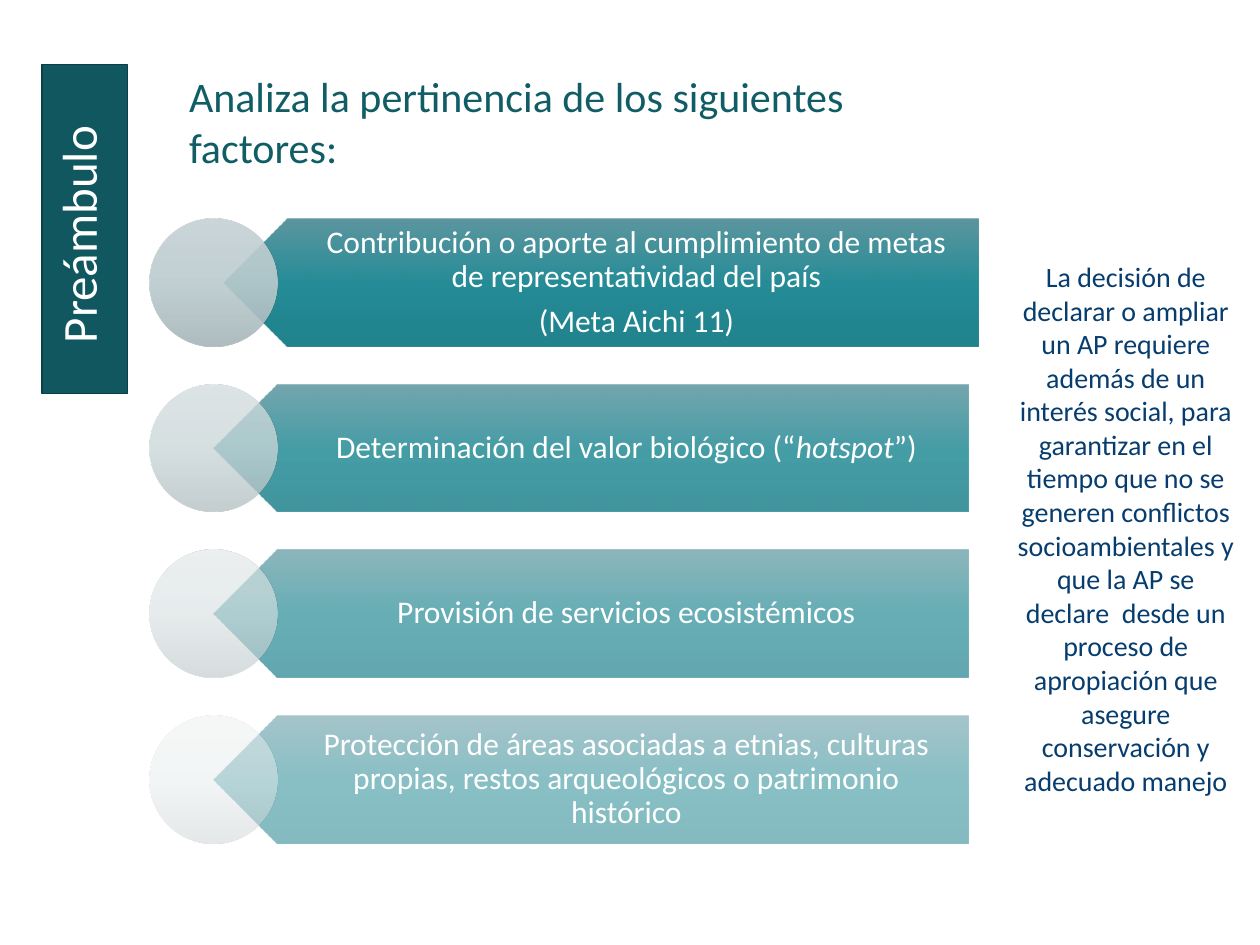
from lxml import etree
from pptx import Presentation
from pptx.dml.color import RGBColor
from pptx.enum.shapes import MSO_SHAPE
from pptx.enum.text import MSO_ANCHOR, MSO_AUTO_SIZE, PP_ALIGN
from pptx.oxml import parse_xml
from pptx.oxml.ns import nsdecls, qn
from pptx.util import Pt

RECTANGLE, PENTAGON, OVAL = MSO_SHAPE.RECTANGLE, MSO_SHAPE.PENTAGON, MSO_SHAPE.OVAL
TOP, MIDDLE = MSO_ANCHOR.TOP, MSO_ANCHOR.MIDDLE
LEFT, CENTER = PP_ALIGN.LEFT, PP_ALIGN.CENTER
NO_AUTOFIT = MSO_AUTO_SIZE.NONE
TITLE_ONLY = 5
FONT = "Calibri"

WHITE = RGBColor(0xFF, 0xFF, 0xFF)
DARK_TEAL = RGBColor(0x10, 0x57, 0x5F)
TAB_LINE = RGBColor(0x0C, 0x40, 0x46)
TITLE_TEAL = RGBColor(0x10, 0x5D, 0x65)
NAVY = RGBColor(0x07, 0x3D, 0x6E)
BAND_COLORS = (RGBColor(0x4D, 0x8C, 0x96), RGBColor(0x10, 0x81, 0x8D),
               RGBColor(0x0A, 0x76, 0x82))

# Each factor: paragraphs of (text, italic) runs, opacity, circle gradient
FACTORS = [
    ([[("Contribución o aporte al cumplimiento de metas de representatividad del país",
        False)],
      [("(Meta Aichi 11)", False)]], 90,
     (RGBColor(0xC6, 0xD2, 0xD5), RGBColor(0xBC, 0xCC, 0xCF), RGBColor(0xA6, 0xB6, 0xBA))),
    ([[("Determinación del valor biológico (“", False), ("hotspot", True),
       ("”)", False)]], 77,
     (RGBColor(0xD3, 0xDD, 0xDF), RGBColor(0xCB, 0xD7, 0xD9), RGBColor(0xB3, 0xC0, 0xC2))),
    ([[("Provisión de servicios ecosistémicos", False)]], 63,
     (RGBColor(0xE1, 0xE7, 0xE8), RGBColor(0xD9, 0xE2, 0xE3), RGBColor(0xC0, 0xC9, 0xCB))),
    ([[("Protección de áreas asociadas a etnias, culturas propias, restos "
        "arqueológicos o patrimonio histórico", False)]], 50,
     (RGBColor(0xEE, 0xF2, 0xF2), RGBColor(0xE8, 0xED, 0xEE), RGBColor(0xCD, 0xD3, 0xD4))),
]
DECISION = ("La decisión de declarar o ampliar un AP requiere además de un interés social, "
            "para garantizar en el tiempo que no se generen conflictos socioambientales y "
            "que la AP se declare  desde un proceso de apropiación que asegure "
            "conservación y adecuado manejo")


def add_run(paragraph, text, size, color, italic=False):
    run = paragraph.add_run()
    run.text = text
    run.font.name, run.font.size, run.font.italic = FONT, Pt(size), italic
    run.font.color.rgb = color


def set_frame(text_frame, anchor):
    text_frame.word_wrap = True
    text_frame.auto_size = NO_AUTOFIT
    text_frame.vertical_anchor = anchor


def set_gradient(shape, colors, opacity):
    """Fill from top to bottom, whatever the rotation of the shape."""
    gradient = parse_xml(f'<a:gradFill {nsdecls("a")} rotWithShape="0"/>')
    stops = etree.SubElement(gradient, qn("a:gsLst"))
    for position, color in zip((0, 50, 100), colors):
        stop = etree.SubElement(stops, qn("a:gs"), pos=str(position * 1000))
        rgb = etree.SubElement(stop, qn("a:srgbClr"), val=str(color))
        etree.SubElement(rgb, qn("a:alpha"), val=str(opacity * 1000))
    etree.SubElement(gradient, qn("a:lin"), ang="5400000", scaled="0")
    shape.fill.background()
    properties = shape._element.spPr
    properties.replace(properties.find(qn("a:noFill")), gradient)


def add_plain_shape(slide, kind, left, top, width, height):
    shape = slide.shapes.add_shape(kind, Pt(left), Pt(top), Pt(width), Pt(height))
    shape.shadow.inherit = False
    return shape


def add_section_tab(slide, left, top, width, height):
    tab = add_plain_shape(slide, RECTANGLE, left, top, width, height)
    tab.fill.solid()
    tab.fill.fore_color.rgb = DARK_TEAL
    tab.line.color.rgb = TAB_LINE
    tab.line.width = Pt(1)
    set_frame(tab.text_frame, TOP)
    tab.text_frame._txBody.bodyPr.set("vert", "vert270")
    paragraph = tab.text_frame.paragraphs[0]
    paragraph.alignment = CENTER
    add_run(paragraph, "Preámbulo ", 28, WHITE)


def add_title(slide, left, top, width, height):
    title = slide.shapes.title
    title.left, title.top, title.width, title.height = map(Pt, (left, top, width, height))
    set_frame(title.text_frame, TOP)
    paragraph = title.text_frame.paragraphs[0]
    paragraph.alignment = LEFT
    add_run(paragraph, "Analiza la pertinencia de los siguientes factores:", 24, TITLE_TEAL)


def add_factor(slide, factor, left, top, width, height, shift):
    paragraphs, opacity, circle_colors = factor
    # Band pointing left, starting at the centre of the circle
    band_left = left + height / 2 + shift
    band_width = width - height / 2
    band = add_plain_shape(slide, PENTAGON, band_left, top, band_width, height)
    band.rotation = 180
    set_gradient(band, BAND_COLORS, opacity)
    band.line.fill.background()

    # Text over the band, clear of its point
    inset = height / 4
    box = slide.shapes.add_textbox(Pt(band_left + inset), Pt(top),
                                   Pt(band_width - inset), Pt(height))
    frame = box.text_frame
    set_frame(frame, MIDDLE)
    frame.margin_left, frame.margin_right = Pt(32.2), Pt(10)
    frame.margin_top = frame.margin_bottom = Pt(5)
    for index, runs in enumerate(paragraphs):
        paragraph = frame.add_paragraph() if index else frame.paragraphs[0]
        paragraph.alignment = CENTER
        paragraph.line_spacing = 0.9
        paragraph.space_after = Pt(6.3)
        for text, italic in runs:
            add_run(paragraph, text, 18, WHITE, italic)

    # Circle
    circle = add_plain_shape(slide, OVAL, left, top, height, height)
    set_gradient(circle, circle_colors, opacity)
    circle.line.fill.background()


def add_factor_list(slide, left, top, width, height):
    row_height = 73
    pitch = (height - row_height) / (len(FACTORS) - 1)
    for index, factor in enumerate(FACTORS):
        shift = 0 if index else 5.8  # the first band stands out to the right
        add_factor(slide, factor, left, top + index * pitch, width, row_height, shift)


def add_decision_note(slide, left, top, width, height):
    box = slide.shapes.add_textbox(Pt(left), Pt(top), Pt(width), Pt(height))
    set_frame(box.text_frame, TOP)
    paragraph = box.text_frame.paragraphs[0]
    paragraph.alignment = CENTER
    add_run(paragraph, DECISION, 16, NAVY)


def main():
    presentation = Presentation()
    presentation.slide_width, presentation.slide_height = Pt(720), Pt(540)
    slide = presentation.slides.add_slide(presentation.slide_layouts[TITLE_ONLY])
    add_section_tab(slide, 23.8, 36.9, 49, 188)
    add_factor_list(slide, 85.7, 124.9, 467.5, 357)
    add_decision_note(slide, 573.1, 144.7, 140.4, 317.5)
    add_title(slide, 100.8, 36.9, 396.7, 65.4)
    presentation.save("out.pptx")


if __name__ == "__main__":
    main()
